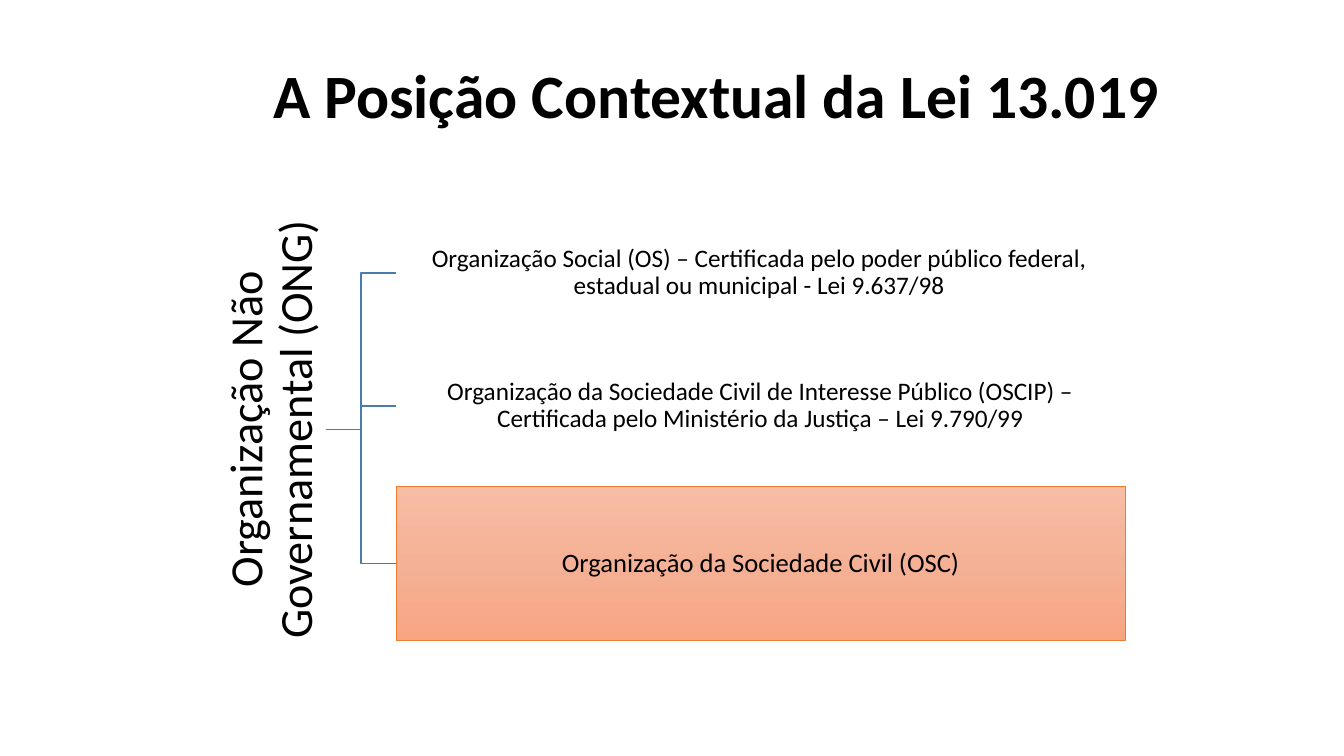
from copy import deepcopy

from pptx import Presentation
from pptx.dml.color import RGBColor
from pptx.enum.shapes import MSO_CONNECTOR, MSO_SHAPE
from pptx.enum.text import MSO_ANCHOR, MSO_AUTO_SIZE, PP_ALIGN
from pptx.oxml.ns import qn
from pptx.util import Inches, Pt

BLACK = RGBColor(0x00, 0x00, 0x00)
WHITE = RGBColor(0xFF, 0xFF, 0xFF)
BLUE = RGBColor(0x49, 0x7C, 0xAB)
ORANGE = RGBColor(0xED, 0x7D, 0x31)
HIGHLIGHT_STOPS = [
    (0, RGBColor(0xF7, 0xBD, 0xA5)),
    (0.5, RGBColor(0xF5, 0xB1, 0x96)),
    (1, RGBColor(0xF8, 0xA5, 0x82)),
]

TITLE_BOX = (2.61, 0.25, 11.5, 1.45)
ROOT_BOX = (-0.09, 3.73, 5.58, 1.06)
# Text, box, font size, highlighted
BRANCHES = [
    ("Organização Social (OS) – Certificada pelo poder público federal, "
     "estadual ou municipal - Lei 9.637/98",
     (3.93, 2.18, 7.2, 1.06), 18, False),
    ("Organização da Sociedade Civil de Interesse Público (OSCIP) – "
     "Certificada pelo Ministério da Justiça – Lei 9.790/99",
     (3.93, 3.5, 7.22, 1.06), 18, False),
    ("Organização da Sociedade Civil (OSC)",
     (3.93, 4.83, 7.23, 1.52), 19, True),
]


def write_text(shape, text, size, alignment, margin, bold=False):
    frame = shape.text_frame
    frame.word_wrap = True
    frame.auto_size = MSO_AUTO_SIZE.NONE
    frame.vertical_anchor = MSO_ANCHOR.MIDDLE
    frame.margin_left = frame.margin_right = Inches(margin)
    frame.margin_top = frame.margin_bottom = Inches(margin)
    paragraph = frame.paragraphs[0]
    paragraph.alignment = alignment
    paragraph.line_spacing = 0.9
    run = paragraph.add_run()
    run.text = text
    run.font.name = "Calibri"
    run.font.size = Pt(size)
    run.font.bold = bold
    run.font.color.rgb = BLACK


def add_title(slide, box):
    title = slide.shapes.title
    title.left, title.top, title.width, title.height = map(Inches, box)
    write_text(title, "A Posição Contextual da Lei 13.019", 44,
               PP_ALIGN.LEFT, 0.1, bold=True)


def fill_highlight(shape):
    """Fill from top to bottom with the three highlight colours."""
    shape.fill.gradient()
    shape.fill.gradient_angle = 270
    stop_list = shape.element.spPr.find(qn("a:gradFill")).find(qn("a:gsLst"))
    stop_list.insert(1, deepcopy(stop_list[0]))
    for stop, (position, color) in zip(shape.fill.gradient_stops, HIGHLIGHT_STOPS):
        stop.position = position
        stop.color.rgb = color


def add_branch(slide, text, box, size, highlighted):
    shape = slide.shapes.add_shape(MSO_SHAPE.RECTANGLE, *map(Inches, box))
    shape.shadow.inherit = False
    if highlighted:
        fill_highlight(shape)
        shape.line.color.rgb = ORANGE
        shape.line.width = Pt(0.5)
    else:
        shape.fill.solid()
        shape.fill.fore_color.rgb = WHITE
        shape.line.fill.background()
    write_text(shape, text, size, PP_ALIGN.CENTER, 0.01)


def add_elbow(slide, start, end):
    connector = slide.shapes.add_connector(
        MSO_CONNECTOR.ELBOW, *map(Inches, start + end))
    connector.line.color.rgb = BLUE
    connector.line.width = Pt(1)
    properties = connector.element.spPr
    properties.append(properties.makeelement(qn("a:effectLst"), {}))


def add_hierarchy(slide, root_box, branches):
    """Place the upright root label and its branches, joined by elbows."""
    left, top, width, height = root_box
    middle_y = top + height / 2
    # The label is turned a quarter, so its height spans left to right.
    root_edge = (left + width / 2 + height / 2, middle_y)
    for _, (branch_left, branch_top, _, branch_height), _, _ in branches:
        add_elbow(slide, root_edge, (branch_left, branch_top + branch_height / 2))
    root = slide.shapes.add_textbox(*map(Inches, root_box))
    root.rotation = 270
    write_text(root, "Organização Não Governamental (ONG)", 33,
               PP_ALIGN.CENTER, 0.02)
    for branch in branches:
        add_branch(slide, *branch)


def main():
    presentation = Presentation()
    presentation.slide_width = Inches(13.33)
    presentation.slide_height = Inches(7.5)
    slide = presentation.slides.add_slide(presentation.slide_layouts[5])
    add_title(slide, TITLE_BOX)
    add_hierarchy(slide, ROOT_BOX, BRANCHES)
    presentation.save("out.pptx")


if __name__ == "__main__":
    main()
